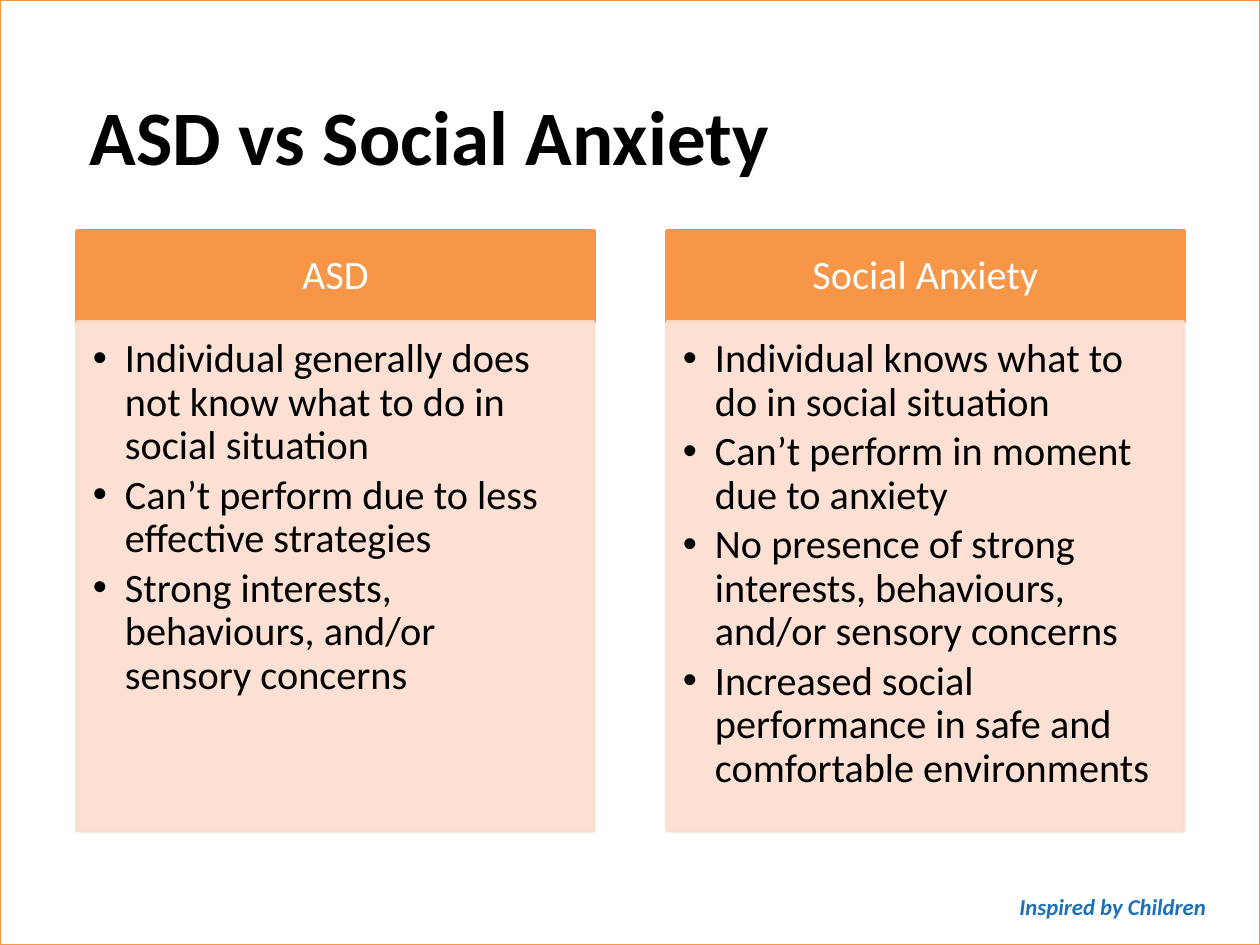
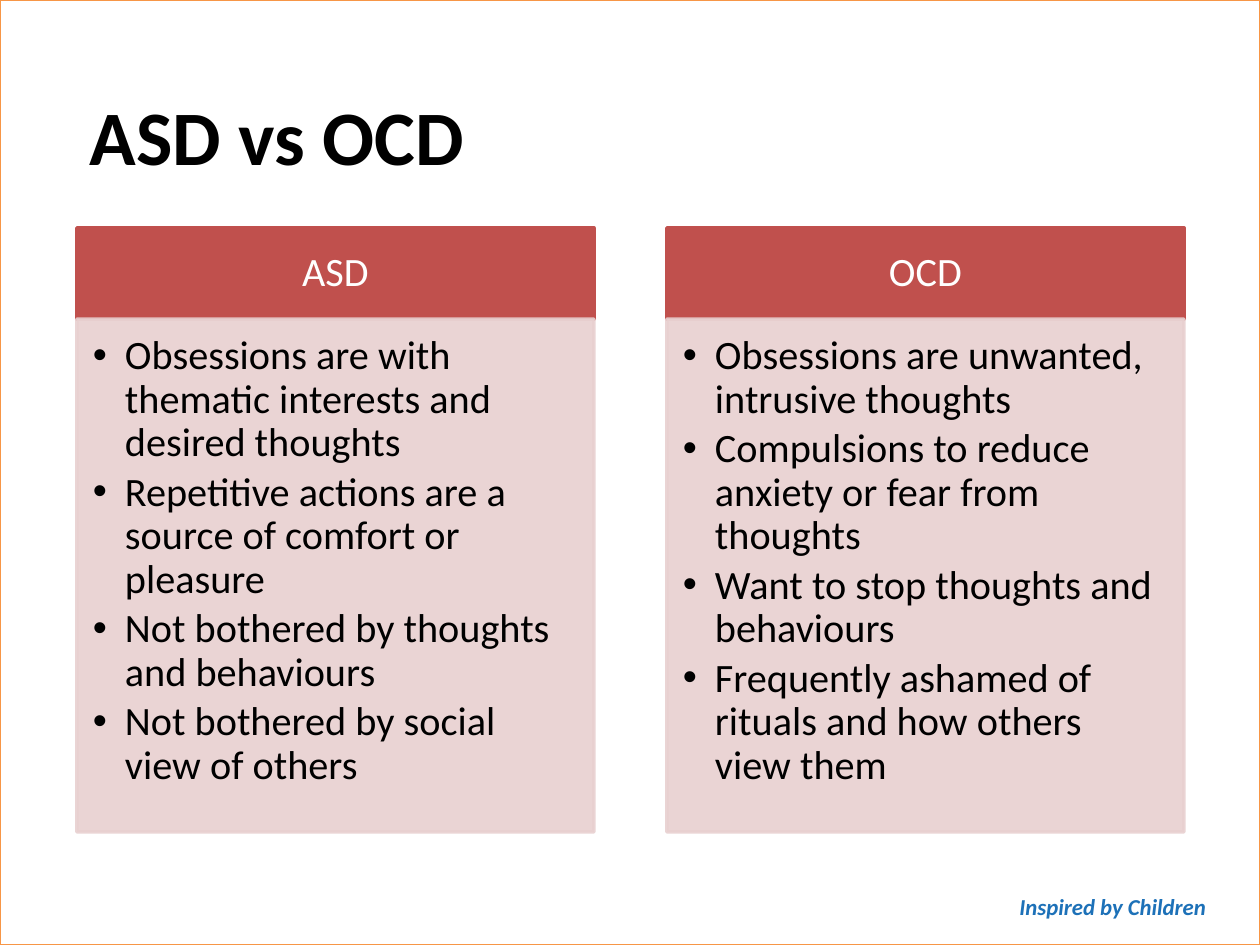
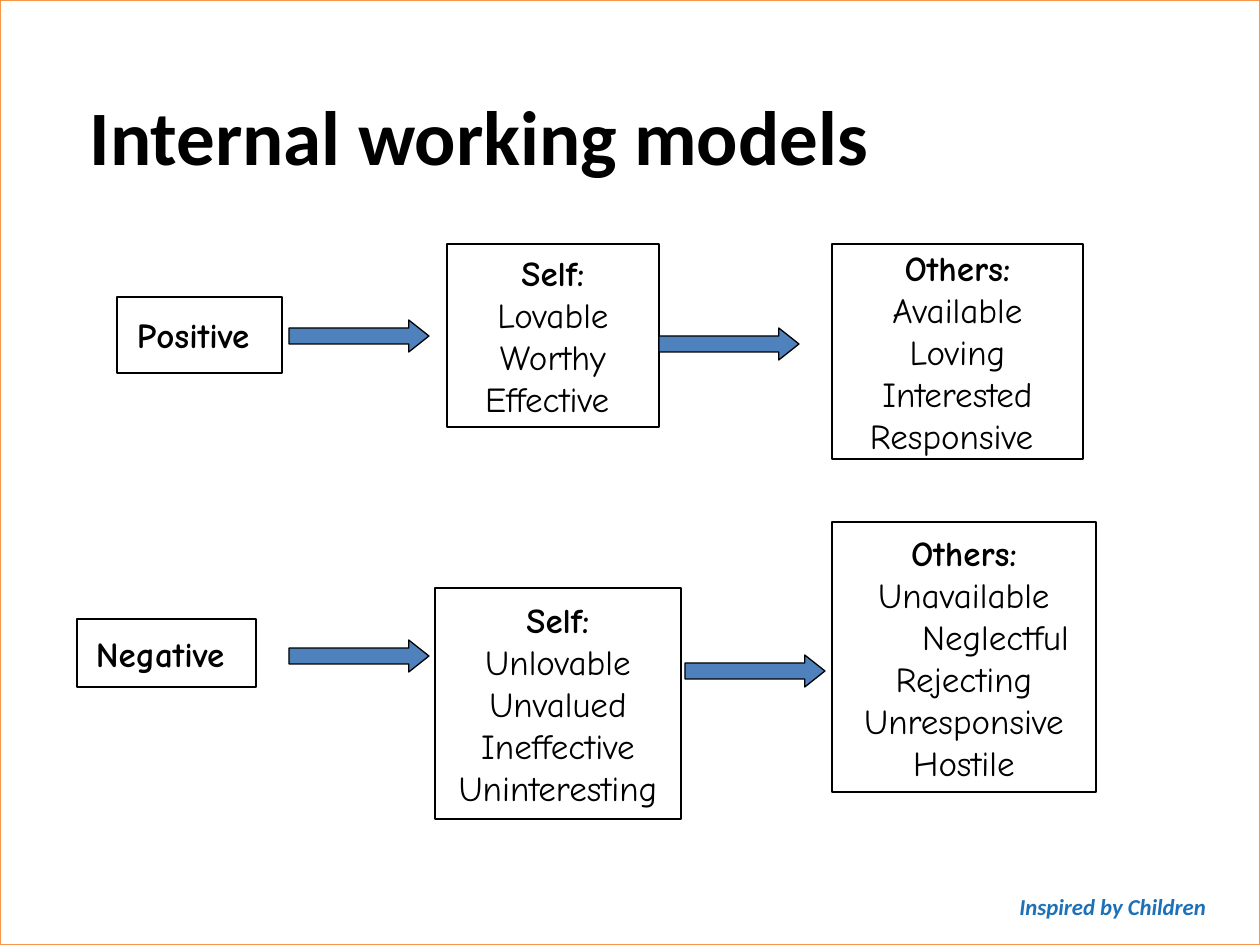
from lxml.etree import SubElement
from pptx import Presentation
from pptx.dml.color import RGBColor
from pptx.enum.shapes import MSO_SHAPE as Preset
from pptx.enum.text import MSO_ANCHOR as Anchor, PP_ALIGN as Align
from pptx.oxml.ns import qn
from pptx.util import Pt

EMU_PER_PX = 914400 / 126
WIDTH, HEIGHT = 1260, 945
MARGIN = 77
ORANGE, RED, BLUE = "F79646", "C0504D", "4F81BD"
PEACH, ROSE = "FCDDCF", "E8D0D0"
BLACK, WHITE, FOOTER_BLUE = "000000", "FFFFFF", "1D71B8"
BODY_FONT, DIAGRAM_FONT = "Calibri", "Comic Neue"


def px(length):
    return round(length * EMU_PER_PX)


def paint(color_format, color, opacity=100):
    color_format.rgb = RGBColor.from_string(color)
    if opacity < 100:
        for node in color_format._xFill.iter(qn("a:srgbClr")):
            SubElement(node, qn("a:alpha"), val=str(opacity * 1000))


class Deck:
    def __init__(self):
        self.presentation = Presentation()
        self.presentation.slide_width = px(WIDTH)
        self.presentation.slide_height = px(HEIGHT)
        self.layout = self.presentation.slide_layouts[5]
        self.slide = None

    def add_slide(self, title):
        first = self.slide is None
        self.slide = self.presentation.slides.add_slide(self.layout)
        if first:
            self.share_frame_and_footer()
        shape = self.slide.shapes.title
        shape.left, shape.top, shape.width, shape.height = map(px, (MARGIN, 77, 1012, 116))
        frame = shape.text_frame
        frame.text = title
        frame.word_wrap = True
        frame.vertical_anchor = Anchor.MIDDLE
        self.style_text(frame.paragraphs[0], 44, BLACK, bold=True)

    def share_frame_and_footer(self):
        frame = self.add_box((0, 0, WIDTH, HEIGHT), WHITE, ORANGE)
        footer = self.slide.shapes.add_textbox(*map(px, (987, 887, 231, 40)))
        footer.text_frame.word_wrap = True
        footer.text_frame.text = "Inspired by Children"
        paragraph = footer.text_frame.paragraphs[0]
        self.style_text(paragraph, 13, FOOTER_BLUE, bold=True, align=Align.RIGHT)
        paragraph.runs[0].font.italic = True
        for number, shape in enumerate((frame, footer), 101):
            shape.element.nvSpPr.cNvPr.set("id", str(number))
            self.layout.shapes.element.append(shape.element)

    def style_text(self, paragraph, size, color, font=BODY_FONT, bold=False, align=Align.LEFT):
        paragraph.alignment = align
        for run in paragraph.runs:
            run.font.name = font
            run.font.size = Pt(size)
            run.font.bold = bold
            paint(run.font.color, color)

    def add_box(self, box, fill, line, weight=0.75, preset=Preset.RECTANGLE, opacity=100):
        shape = self.slide.shapes.add_shape(preset, *map(px, box))
        shape.shadow.inherit = False
        if fill:
            shape.fill.solid()
            paint(shape.fill.fore_color, fill, opacity)
        else:
            shape.fill.background()
        shape.line.width = Pt(weight)
        shape.line.fill.solid()
        paint(shape.line.color, line, opacity)
        return shape

    def fill_text(self, shape, lines, insets, anchor):
        frame = shape.text_frame
        frame.text = "\n".join(lines)
        frame.word_wrap = True
        frame.vertical_anchor = anchor
        (frame.margin_left, frame.margin_top,
         frame.margin_right, frame.margin_bottom) = map(px, insets)
        for paragraph in frame.paragraphs:
            paragraph.line_spacing = 0.9
        return frame.paragraphs

    def heading(self, box, text, color):
        shape = self.add_box(box, color, color, 2)
        for paragraph in self.fill_text(shape, [text], (23, 13, 23, 13), Anchor.MIDDLE):
            self.style_text(paragraph, 23, WHITE, align=Align.CENTER)

    def bullets(self, box, lines, tint):
        shape = self.add_box(box, tint, tint, 2, opacity=90)
        for paragraph in self.fill_text(shape, lines, (16, 16, 23, 25), Anchor.TOP):
            paragraph.space_after = Pt(3.5)
            properties = paragraph._p.get_or_add_pPr()
            properties.set("marL", str(px(32)))
            properties.set("indent", str(px(-32)))
            SubElement(properties, qn("a:buFont"), typeface="Arial")
            SubElement(properties, qn("a:buChar"), char="•")
            self.style_text(paragraph, 23, BLACK)

    def comparison(self, title, top, body_height, color, tint, columns):
        self.add_slide(title)
        width, pitch, heading_height = 517, 590, 91
        for index, (heading, lines) in enumerate(columns):
            left = MARGIN + index * pitch
            self.heading((left, top, width, heading_height), heading, color)
            self.bullets((left, top + heading_height, width, body_height), lines, tint)

    def model_box(self, box, lines, indented=()):
        frame = self.add_box(box, None, BLACK).text_frame
        frame.text = "\n".join(lines)
        frame.word_wrap = False
        frame.vertical_anchor = Anchor.MIDDLE
        for index, paragraph in enumerate(frame.paragraphs):
            self.style_text(paragraph, 20, BLACK, DIAGRAM_FONT, index == 0, Align.CENTER)
            if paragraph.text in indented:
                paragraph._p.get_or_add_pPr().set("marL", str(px(63)))

    def arrow(self, left, top):
        shape = self.add_box((left, top, 140, 32), BLUE, BLACK, preset=Preset.RIGHT_ARROW)
        shape.adjustments[1] = 0.63


def main():
    deck = Deck()
    deck.comparison("ASD vs Social Anxiety", 231, 509, ORANGE, PEACH, [
        ("ASD", [
            "Individual generally does not know what to do in social situation",
            "Can’t perform due to less effective strategies",
            "Strong interests, behaviours, and/or sensory concerns",
        ]),
        ("Social Anxiety", [
            "Individual knows what to do in social situation",
            "Can’t perform in moment due to anxiety",
            "No presence of strong interests, behaviours, and/or sensory concerns",
            "Increased social performance in safe and comfortable environments",
        ]),
    ])
    deck.comparison("ASD vs OCD", 228, 513, RED, ROSE, [
        ("ASD", [
            "Obsessions are with thematic interests and desired thoughts",
            "Repetitive actions are a source of comfort or pleasure",
            "Not bothered by thoughts and behaviours",
            "Not bothered by social view of others",
        ]),
        ("OCD", [
            "Obsessions are unwanted, intrusive thoughts",
            "Compulsions to reduce anxiety or fear from thoughts",
            "Want to stop thoughts and behaviours",
            "Frequently ashamed of rituals and how others view them",
        ]),
    ])

    deck.add_slide("Internal working models")
    models = [
        ((117, 297, 165, 76), ["Positive "]),
        ((447, 244, 212, 183), ["Self:", "Lovable", "Worthy", "Effective "]),
        ((832, 244, 251, 215),
         ["Others:", "Available", "Loving", "Interested", "Responsive "]),
        ((77, 619, 179, 68), ["Negative "]),
        ((435, 588, 246, 231),
         ["Self:", "Unlovable", "Unvalued", "Ineffective", "Uninteresting"]),
        ((832, 522, 264, 270),
         ["Others:", "Unavailable", "Neglectful", "Rejecting", "Unresponsive", "Hostile"]),
    ]
    for box, lines in models:
        deck.model_box(box, lines, indented=("Neglectful",))
    for left, top in [(289, 320), (659, 328), (289, 640), (685, 655)]:
        deck.arrow(left, top)
    deck.presentation.save("out.pptx")


if __name__ == "__main__":
    main()
